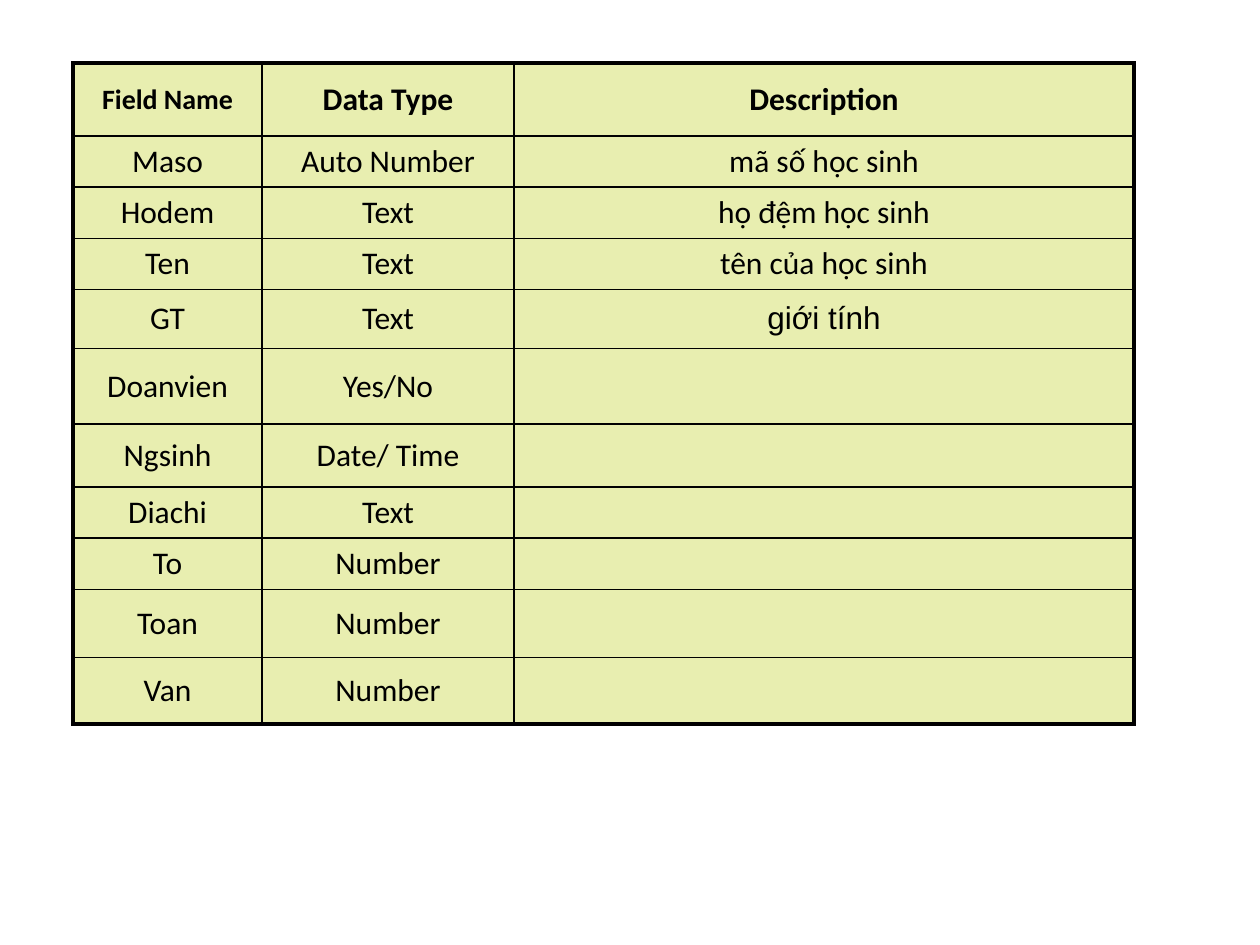
from lxml import etree
from pptx import Presentation
from pptx.dml.color import RGBColor
from pptx.enum.text import MSO_ANCHOR, PP_ALIGN
from pptx.oxml.ns import qn
from pptx.util import Inches, Pt

CENTER = PP_ALIGN.CENTER
MIDDLE = MSO_ANCHOR.MIDDLE
BLACK = "000000"
PALE_GREEN = "E8EEB0"
INNER_LINE = 1
OUTER_LINE = 2.25

COLUMN_WIDTHS = [1.5, 2, 4.92]
ROW_HEIGHTS = [0.58, 0.4, 0.4, 0.4, 0.47, 0.6, 0.5, 0.4, 0.4, 0.54, 0.53]
FIELDS = [
    ("Field Name", "Data Type", "Description"),
    ("Maso", "Auto Number", "mã số học sinh"),
    ("Hodem", "Text", "họ đệm học sinh"),
    ("Ten", "Text", "tên của học sinh"),
    ("GT", "Text", "giới tính"),
    ("Doanvien", "Yes/No", ""),
    ("Ngsinh", "Date/ Time", ""),
    ("Diachi", "Text", ""),
    ("To", "Number", ""),
    ("Toan", "Number", ""),
    ("Van", "Number", ""),
]
SPECIAL_FORMATS = {"Field Name": {"size": 16}, "giới tính": {"font": "Arial"}}


def rgb(color):
    return RGBColor.from_string(color)


def write_text(cell, text, size=18, font="Calibri", bold=False, color=BLACK):
    cell.vertical_anchor = MIDDLE
    paragraph = cell.text_frame.paragraphs[0]
    paragraph.alignment = CENTER
    paragraph.font.size = Pt(size)
    if text:
        run = paragraph.add_run()
        run.text = text
        run.font.size = Pt(size)
        run.font.name = font
        run.font.bold = bold
        run.font.color.rgb = rgb(color)


def draw_borders(cell, widths, color=BLACK):
    properties = cell._tc.get_or_add_tcPr()
    for side, width in widths.items():
        line = etree.SubElement(properties, qn(f"a:ln{side}"), w=str(Pt(width)))
        fill = etree.SubElement(line, qn("a:solidFill"))
        etree.SubElement(fill, qn("a:srgbClr"), val=color)


def border_widths(row, column):
    at_edge = {
        "L": column == 0,
        "R": column == len(COLUMN_WIDTHS) - 1,
        "T": row == 0,
        "B": row == len(ROW_HEIGHTS) - 1,
    }
    return {side: OUTER_LINE if edge else INNER_LINE for side, edge in at_edge.items()}


def add_field_table(slide, left, top):
    table = slide.shapes.add_table(
        len(FIELDS), len(COLUMN_WIDTHS), Inches(left), Inches(top),
        Inches(sum(COLUMN_WIDTHS)), Inches(sum(ROW_HEIGHTS)),
    ).table
    table.horz_banding = False
    for column, width in zip(table.columns, COLUMN_WIDTHS):
        column.width = Inches(width)
    for row, height in zip(table.rows, ROW_HEIGHTS):
        row.height = Inches(height)
    for row, field in enumerate(FIELDS):
        for column, text in enumerate(field):
            cell = table.cell(row, column)
            draw_borders(cell, border_widths(row, column))
            cell.fill.solid()
            cell.fill.fore_color.rgb = rgb(PALE_GREEN)
            write_text(cell, text, bold=row == 0, **SPECIAL_FORMATS.get(text, {}))


def main():
    presentation = Presentation()
    presentation.slide_width = Inches(10)
    presentation.slide_height = Inches(7.5)
    slide = presentation.slides.add_slide(presentation.slide_layouts[6])
    add_field_table(slide, 0.58, 0.5)
    presentation.save("out.pptx")


if __name__ == "__main__":
    main()
